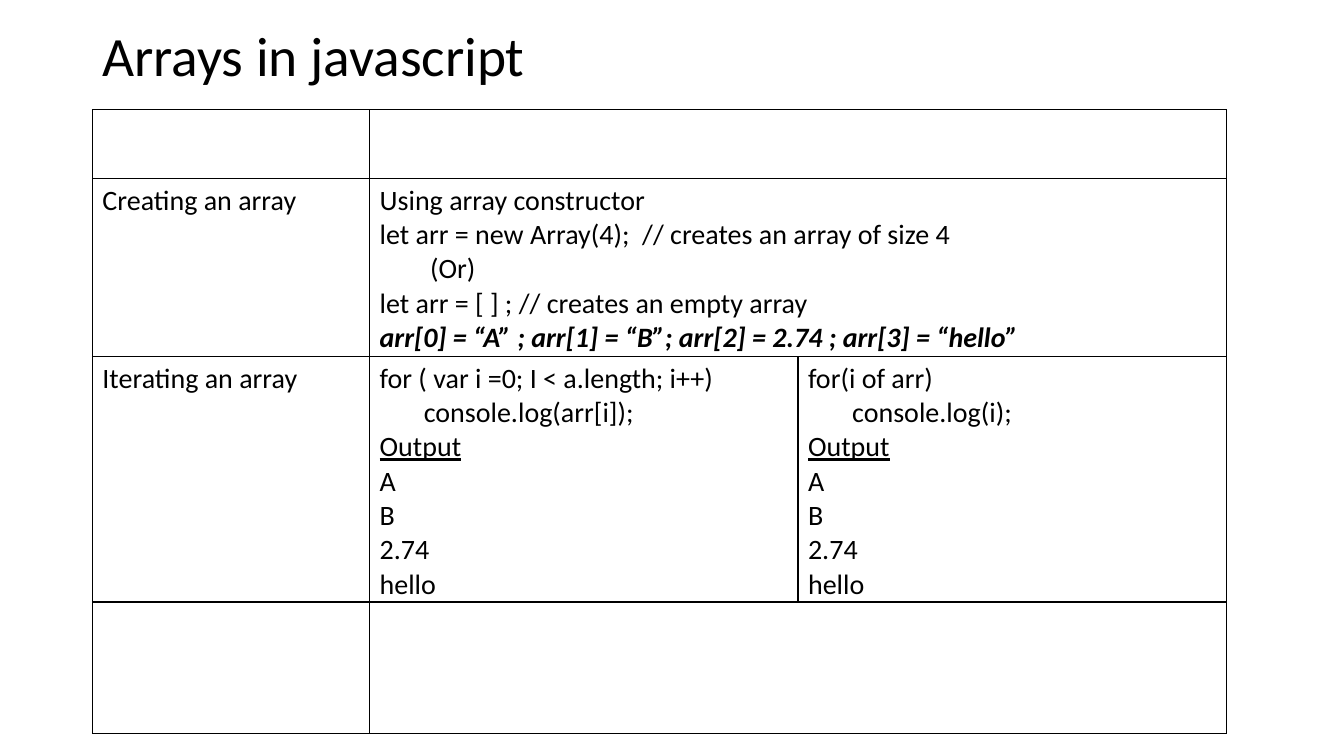
from lxml.etree import SubElement
from pptx import Presentation
from pptx.dml.color import RGBColor
from pptx.enum.text import MSO_ANCHOR
from pptx.oxml.ns import qn
from pptx.util import Pt

BLACK = RGBColor(0, 0, 0)
WHITE = RGBColor(255, 255, 255)
FONT = "Calibri"
BODY_SIZE = 20

COLUMN_WIDTHS = (198, 306, 306)
ROW_HEIGHTS = (49, 123, 170, 94)
MERGED_ROWS = (0, 1, 3)

OUTPUT = (("Output", {"underline": True}), ("A", {}), ("B", {}), ("2.74", {}), ("hello", {}))
CELL_LINES = {
    (1, 0): (("Creating an array", {}),),
    (1, 1): (
        ("Using array constructor", {}),
        ("let arr = new Array(4);  // creates an array of size 4", {}),
        ("(Or)", {"indent": 36}),
        ("let arr = [ ] ; // creates an empty array", {}),
        ("arr[0] = “A” ; arr[1] = “B”; arr[2] = 2.74 ; arr[3] = “hello”",
         {"bold": True, "italic": True}),
    ),
    (2, 0): (("Iterating an array", {}),),
    (2, 1): (
        ("for ( var i =0; I < a.length; i++)", {}),
        ("console.log(arr[i]);", {"indent": 31.5}),
        *OUTPUT,
    ),
    (2, 2): (
        ("for(i of arr)", {}),
        ("console.log(i);", {"indent": 31.5}),
        *OUTPUT,
    ),
}


def style_paragraph(paragraph, size, bold=False, italic=False, underline=False, indent=0):
    font = paragraph.font
    font.name, font.size, font.color.rgb = FONT, Pt(size), BLACK
    font.bold, font.italic, font.underline = bold, italic, underline
    if indent:
        properties = paragraph._p.get_or_add_pPr()
        properties.set("marL", str(Pt(indent)))
        properties.set("indent", "0")


def add_title(slide, left, top, width, height):
    frame = slide.shapes.add_textbox(Pt(left), Pt(top), Pt(width), Pt(height)).text_frame
    frame.word_wrap = True
    frame.vertical_anchor = MSO_ANCHOR.MIDDLE
    paragraph = frame.paragraphs[0]
    paragraph.text = "Arrays in javascript"
    paragraph.line_spacing = 0.9
    style_paragraph(paragraph, 39.6)


def add_borders(cell):
    properties = cell._tc.get_or_add_tcPr()
    for side in ("a:lnL", "a:lnR", "a:lnT", "a:lnB"):
        line = SubElement(properties, qn(side), w=str(Pt(1)))
        fill = SubElement(line, qn("a:solidFill"))
        SubElement(fill, qn("a:srgbClr"), val=str(BLACK))


def fill_cell(cell, lines):
    frame = cell.text_frame
    for index, (text, style) in enumerate(lines):
        paragraph = frame.add_paragraph() if index else frame.paragraphs[0]
        paragraph.text = text
        style_paragraph(paragraph, BODY_SIZE, **style)


def add_array_table(slide, left, top):
    table = slide.shapes.add_table(
        len(ROW_HEIGHTS), len(COLUMN_WIDTHS), Pt(left), Pt(top),
        Pt(sum(COLUMN_WIDTHS)), Pt(sum(ROW_HEIGHTS))).table
    table.first_row = table.horz_banding = False
    for column, width in zip(table.columns, COLUMN_WIDTHS):
        column.width = Pt(width)
    for row, height in zip(table.rows, ROW_HEIGHTS):
        row.height = Pt(height)
    for cell in table.iter_cells():
        add_borders(cell)
        cell.fill.background()
    for row in MERGED_ROWS:
        table.cell(row, 1).merge(table.cell(row, 2))
    for (row, column), lines in CELL_LINES.items():
        fill_cell(table.cell(row, column), lines)


def main():
    presentation = Presentation()
    presentation.slide_width, presentation.slide_height = Pt(960), Pt(540)
    slide = presentation.slides.add_slide(presentation.slide_layouts[6])
    slide.background.fill.solid()
    slide.background.fill.fore_color.rgb = WHITE
    add_title(slide, 66, 15, 828, 53)
    add_array_table(slide, 66, 78.5)
    presentation.save("out.pptx")


if __name__ == "__main__":
    main()
